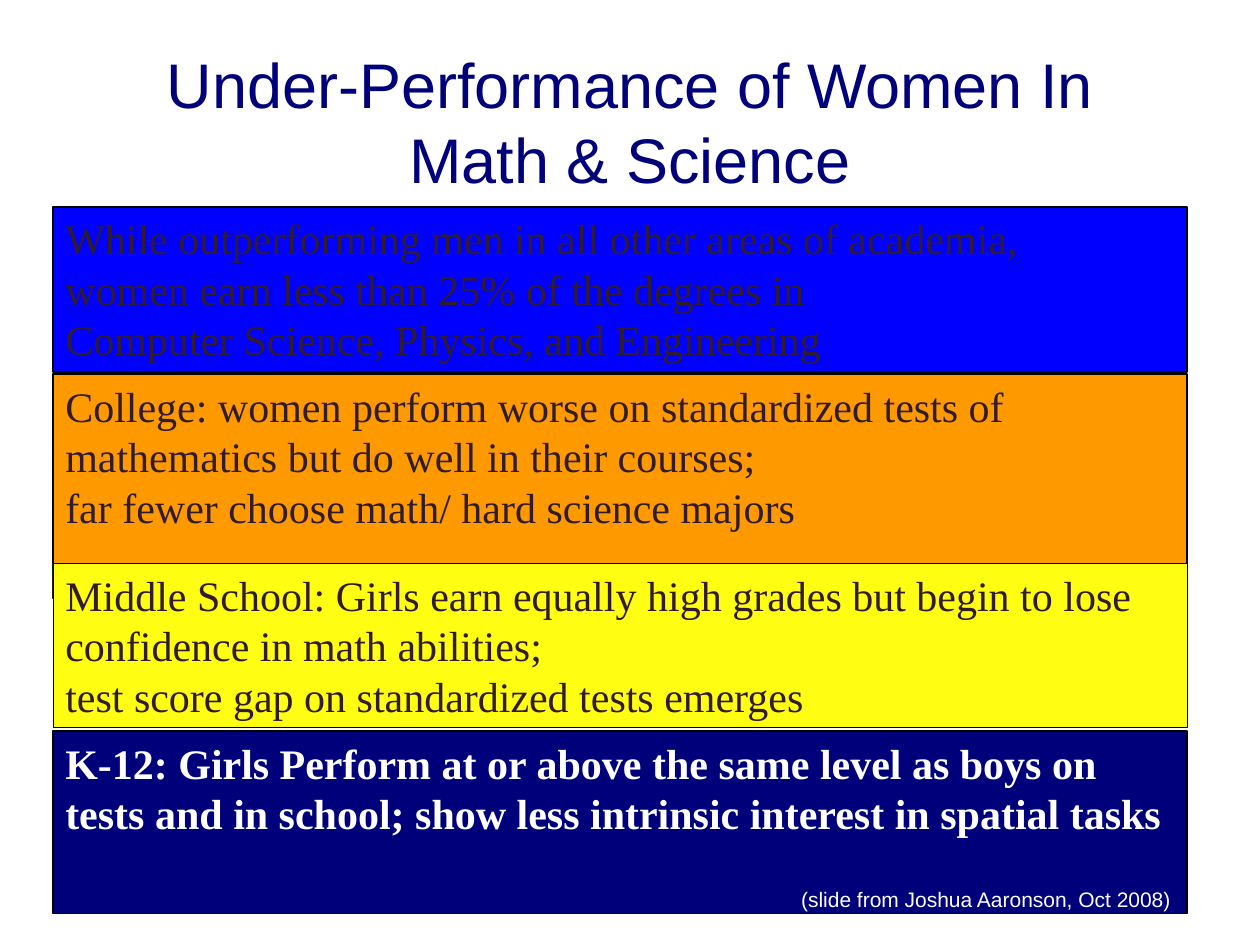
from pptx import Presentation
from pptx.dml.color import RGBColor
from pptx.enum import shapes, text
from pptx.util import Inches, Pt

HUES = {"paper": "FFFFFF", "navy": "01007B", "blue": "0000FF", "orange": "FF9900",
        "yellow": "FFFD11", "ink": "301C2C", "black": "000000"}
TITLE = "Under-Performance of Women In Math & Science"
CREDIT = "(slide from Joshua Aaronson, Oct 2008)"
BANDS = [
    (1.64, 1.31, "blue", "ink", 1, [
        "While outperforming men in all other areas of academia,",
        "women earn less than 25% of the degrees in",
        "Computer Science, Physics, and Engineering"]),
    (2.97, 1.78, "orange", "ink", 1, [
        "College: women perform worse on standardized tests of mathematics "
        "but do well in their courses;",
        "far fewer choose math/ hard science majors"]),
    (4.47, 1.3, "yellow", "ink", 0.25, [
        "Middle School: Girls earn equally high grades but begin to lose "
        "confidence in math abilities;",
        "test score gap on standardized tests emerges"]),
    (5.8, 1.45, "navy", "paper", 1, [
        "K-12: Girls Perform at or above the same level as boys on tests and in "
        "school; show less intrinsic interest in spatial tasks"]),
]


def hue(name):
    return RGBColor.from_string(HUES[name])


def write(frame, lines, face, size, tint, align, bold=False):
    for i, line in enumerate(lines):
        para = frame.paragraphs[0] if i == 0 else frame.add_paragraph()
        para.alignment = align
        run = para.add_run()
        run.text = line
        run.font.name = face
        run.font.size = Pt(size)
        run.font.bold = bold
        run.font.color.rgb = hue(tint)


def band(slide, top, high, fill, tint, width, lines):
    box = slide.shapes.add_shape(shapes.MSO_SHAPE.RECTANGLE, Inches(0.42),
                                 Inches(top), Inches(9), Inches(high))
    box.shadow.inherit = False
    box.fill.solid()
    box.fill.fore_color.rgb = hue(fill)
    box.line.color.rgb = hue("black")
    box.line.width = Pt(width)
    frame = box.text_frame
    frame.word_wrap = True
    frame.vertical_anchor = text.MSO_ANCHOR.TOP
    write(frame, lines, "Times New Roman", 24, tint, text.PP_ALIGN.LEFT,
          bold=fill == "navy")


def main():
    deck = Presentation()
    deck.slide_width, deck.slide_height = Inches(10), Inches(7.5)
    slide = deck.slides.add_slide(deck.slide_layouts[5])
    slide.background.fill.solid()
    slide.background.fill.fore_color.rgb = hue("paper")

    title = slide.shapes.title
    title.left, title.top = Inches(0.75), Inches(0.25)
    title.width, title.height = Inches(8.5), Inches(1.42)
    title.text_frame.vertical_anchor = text.MSO_ANCHOR.MIDDLE
    write(title.text_frame, [TITLE], "Arial", 36, "navy", text.PP_ALIGN.CENTER)

    for row in BANDS:
        band(slide, *row)

    note = slide.shapes.add_textbox(Inches(6.26), Inches(6.99), Inches(3.17), Inches(0.3))
    note.text_frame.word_wrap = False
    write(note.text_frame, [CREDIT], "Arial", 12, "paper", text.PP_ALIGN.LEFT)

    deck.save("out.pptx")


if __name__ == "__main__":
    main()
